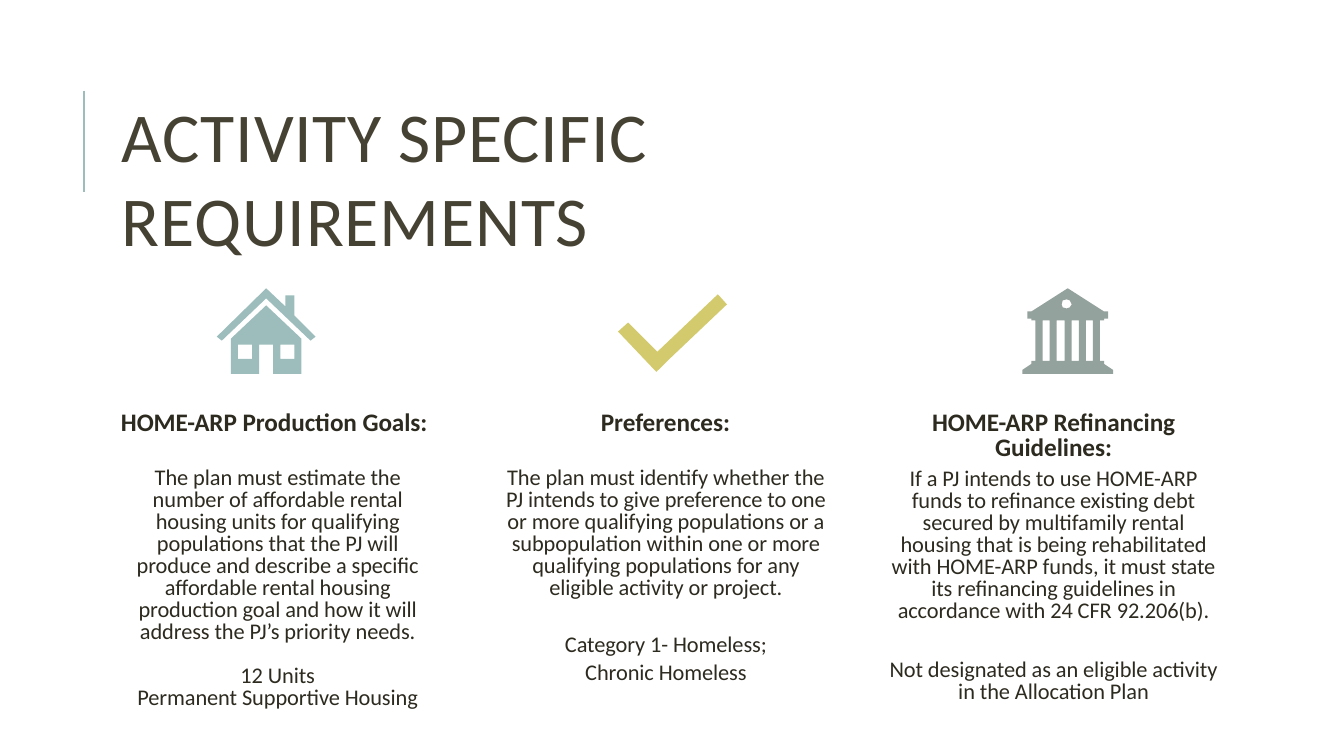
from pptx import Presentation
from pptx.dml.color import RGBColor
from pptx.enum.shapes import MSO_CONNECTOR
from pptx.enum.text import MSO_ANCHOR, PP_ALIGN as Align
from pptx.oxml.ns import qn
from pptx.util import Emu, Pt
from lxml.etree import SubElement

PX = 9144  # EMU per px, 100 px to the inch
FONT = "Calibri"
TITLE_INK = RGBColor(0x46, 0x42, 0x33)
INK = RGBColor(0x2D, 0x2B, 0x20)
TEAL = RGBColor(0x9C, 0xBD, 0xBC)
OLIVE = RGBColor(0xD2, 0xCA, 0x6C)
SAGE = RGBColor(0x94, 0xA2, 0x9D)

# Content: text
TITLE = "ACTIVITY SPECIFIC REQUIREMENTS"
GOALS = "HOME-ARP Production Goals:"
GOALS_BODY = [
    "The plan must estimate the number of affordable rental housing units for "
    "qualifying populations that the PJ will produce and describe a specific "
    "affordable rental housing production goal and how it will address the "
    "PJ’s priority needs.",
    "12 Units",
    "Permanent Supportive Housing",
]
PREFERENCES = "Preferences:"
PREFERENCES_BODY = [
    "The plan must identify whether the PJ intends to give preference to one or "
    "more qualifying populations or a subpopulation within one or more "
    "qualifying populations for any eligible activity or project.",
    "Category 1- Homeless;",
    "Chronic Homeless",
]
REFINANCING = "HOME-ARP Refinancing Guidelines:"
REFINANCING_BODY = [
    "If a PJ intends to use HOME-ARP funds to refinance existing debt secured by "
    "multifamily rental housing that is being rehabilitated with HOME-ARP funds, "
    "it must state its refinancing guidelines in accordance with 24 CFR 92.206(b).",
    "Not designated as an eligible activity in the Allocation Plan",
]


# Content: icon outlines, in px
def block(left, top, right, bottom):
    return [(left, top), (right, top), (right, bottom), (left, bottom)]


HOUSE = [
    [(299, 336), (264, 303), (229, 336), (229, 371), (257, 371), (257, 342),
     (271, 342), (271, 371), (299, 371)],
    *[block(left, 342, left + 14, 356) for left in (236, 278)],
    [(313, 334), (292, 313), (292, 293), (283, 293), (283, 304), (264, 286),
     (215, 334), (220, 338), (264, 296), (308, 338)],
]
CHECK = [[(712, 292), (652, 349), (623, 320), (613, 329), (651, 369), (661, 359),
          (721, 302)]]
BANK = [
    [(1059, 286), (1023, 309), (1095, 309)],
    [(1058, 297), (1061, 298), (1063, 302), (1061, 305), (1058, 306), (1054, 305),
     (1053, 302), (1054, 298)],
    block(1019, 309, 1099, 316),
    block(1023, 316, 1095, 318),
    *[block(left, 318, left + 7, 358) for left in (round(1027 + 14.25 * i) for i in range(5))],
    [(1095, 358), (1023, 358), (1023, 361), (1014, 367), (1014, 371), (1104, 371),
     (1104, 367), (1095, 361)],
]

deck = Presentation()
deck.slide_width, deck.slide_height = Emu(1333 * PX), Emu(750 * PX)
page = deck.slides.add_slide(deck.slide_layouts[6])


def add_box(left, top, width, height, inset=1):
    """Add a text box and return its text frame."""
    box = page.shapes.add_textbox(left * PX, top * PX, width * PX, height * PX)
    frame = box.text_frame
    frame.word_wrap = True
    frame.vertical_anchor = MSO_ANCHOR.TOP
    frame.margin_left = frame.margin_right = frame.margin_bottom = 0
    frame.margin_top = Emu(inset * PX)
    return frame


def write(frame, text, size=16, color=INK, bold=False, align=Align.CENTER,
          leading=0.82, before=0, tracking=-0.05):
    """Append one paragraph; tracking is in points."""
    para = frame.paragraphs[0]
    if para.runs:
        para = frame.add_paragraph()
    para.alignment = align
    para.line_spacing = leading
    para.space_before = Pt(before)
    span = para.add_run()
    span.text = text
    span.font.name, span.font.size, span.font.bold = FONT, Pt(size), bold
    span.font.color.rgb = color
    span._r.get_or_add_rPr().set("spc", str(round(tracking * 100)))


def draw_icon(contours, color):
    """Draw all contours as one filled freeform; inner ones become holes."""
    builder = page.shapes.build_freeform(*contours[0][0], scale=PX)
    for number, contour in enumerate(contours):
        if number:
            builder.move_to(*contour[0])
        builder.add_line_segments(contour[1:], close=True)
    icon = builder.convert_to_shape()
    icon.shadow.inherit = False
    icon.fill.solid()
    icon.fill.fore_color.rgb = color
    icon.line.fill.background()


# Title with its accent rule
rule = page.shapes.add_connector(MSO_CONNECTOR.STRAIGHT, 83 * PX, 90 * PX, 83 * PX, 190 * PX)
rule.line.color.rgb = TEAL
rule.line.width = Pt(1.5)
SubElement(rule._element.spPr, qn("a:effectLst"))
write(add_box(121, 91, 857, 86), TITLE, size=50, color=TITLE_INK, align=Align.LEFT,
      leading=1.0, before=0.9, tracking=0.5)

# Icons
for contours, color in ((HOUSE, TEAL), (CHECK, OLIVE), (BANK, SAGE)):
    draw_icon(contours, color)

# Headings of the first two columns
for heading, left, width in ((GOALS, 120, 313), (PREFERENCES, 596, 129)):
    write(add_box(left, 402, width, 33), heading, size=18, bold=True,
          align=Align.LEFT, leading=1.0, before=1)

# Column bodies; the third box also holds its heading
goals = add_box(122, 458, 307, 229, inset=6)
preferences = add_box(500, 458, 321, 226, inset=6)
refinancing = add_box(880, 402, 330, 299, inset=7)
write(refinancing, REFINANCING, size=18, bold=True, leading=Pt(17.6), before=4.9)

for frame, texts, gaps in (
    (goals, GOALS_BODY, (4.5, 15.7, 0)),
    (preferences, PREFERENCES_BODY, (4.5, 25, 4.5)),
    (refinancing, REFINANCING_BODY, (5.2, 26.4)),
):
    for text, gap in zip(texts, gaps):
        write(frame, text, before=gap)

deck.save("out.pptx")
